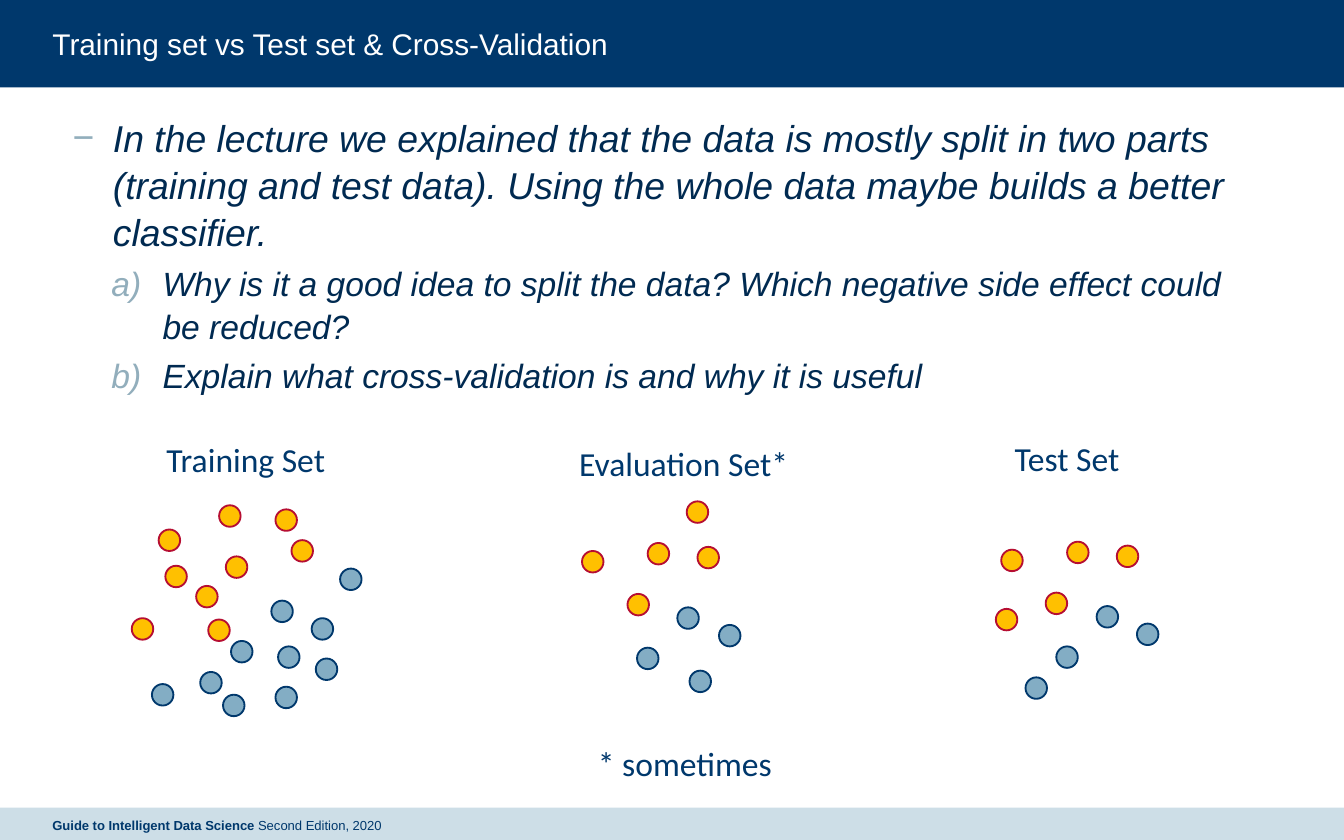
import pptx
import pptx.util
import pptx.dml.color
import pptx.enum.shapes
import pptx.enum.text
import pptx.oxml.ns
from lxml import etree

Pt = pptx.util.Pt
RGBColor = pptx.dml.color.RGBColor
SHAPE = pptx.enum.shapes.MSO_SHAPE
ANCHOR = pptx.enum.text.MSO_ANCHOR
AUTO_SIZE = pptx.enum.text.MSO_AUTO_SIZE
ALIGN = pptx.enum.text.PP_ALIGN
qn = pptx.oxml.ns.qn

NAVY = RGBColor(0x00, 0x38, 0x6C)
INK = RGBColor(0x00, 0x2A, 0x51)
PALE = RGBColor(0xCD, 0xDE, 0xE7)
BULLET = RGBColor(0x92, 0xAE, 0xBC)
YELLOW = RGBColor(0xFF, 0xC0, 0x00)
RED = RGBColor(0xB6, 0x0E, 0x32)
BLUE = RGBColor(0x83, 0xAD, 0xC4)
WHITE = RGBColor(0xFF, 0xFF, 0xFF)

WIDTH, HEIGHT = 720, 450
MARGIN = 28.1
FOOTER_TOP = 432.7
DOT = 11.5

SETS = [
    ("Test Set", (536.4, 231.1, 71.3),
     [(533.5, 326.2), (536.4, 294.5), (560.2, 317.5), (571.7, 290.2), (598.3, 292.3)],
     [(565.9, 346.3), (587.5, 324.7), (609.1, 334.1), (549.4, 362.9)]),
    ("Training Set", (82.1, 231.8, 100.8),
     [(147.6, 272.9), (105.1, 313.9), (88.6, 303.1), (85, 283.7), (121, 298.1),
      (111.6, 331.9), (117.4, 270.7), (156.2, 289.4), (70.6, 331.2)],
     [(149, 346.3), (182.2, 304.6), (169.2, 352.8), (123.8, 343.4), (145.4, 321.8),
      (167, 331.2), (107.3, 360), (81.4, 366.5), (147.6, 367.9), (119.5, 372.2)]),
    ("Evaluation Set*", (303.1, 234, 128.2),
     [(367.9, 268.6), (311.8, 295.2), (336.2, 318.2), (347, 290.9), (373.7, 293)],
     [(341.3, 347), (362.9, 325.4), (385.2, 334.8), (369.4, 359.3)]),
]

QUESTIONS = [
    (0, "In the lecture we explained that the data is mostly split in two parts "
        "(training and test data). Using the whole data maybe builds a better classifier."),
    (1, "Why is it a good idea to split the data? Which negative side effect could be reduced?"),
    (1, "Explain what cross-validation is and why it is useful"),
]


def add_text(p, text, size=18, font="Calibri", color=NAVY, bold=False, italic=False):
    r = p.add_run()
    r.text = text
    r.font.size = Pt(size)
    r.font.name = font
    r.font.color.rgb = color
    r.font.bold = bold
    r.font.italic = italic


class Deck:
    def __init__(self):
        self.prs = pptx.Presentation()
        self.prs.slide_width, self.prs.slide_height = Pt(WIDTH), Pt(HEIGHT)
        self.s = self.prs.slides.add_slide(self.prs.slide_layouts[1])

    def place(self, sp, left, top, width, height):
        sp.left, sp.top, sp.width, sp.height = Pt(left), Pt(top), Pt(width), Pt(height)
        tf = sp.text_frame
        tf.margin_left = tf.margin_top = tf.margin_right = tf.margin_bottom = 0
        tf.word_wrap = True
        tf.auto_size = AUTO_SIZE.NONE
        tf.vertical_anchor = ANCHOR.TOP
        return tf

    def bar(self, top, height, color):
        sp = self.s.shapes.add_shape(SHAPE.RECTANGLE, 0, Pt(top), Pt(WIDTH), Pt(height))
        sp.shadow.inherit = False
        sp.fill.solid()
        sp.fill.fore_color.rgb = color
        sp.line.fill.background()
        self.s.shapes._spTree.insert(2, sp._element)

    def title(self, text):
        tf = self.place(self.s.shapes.title, MARGIN, 13.7, 663.8, 19.4)
        p = tf.paragraphs[0]
        p.alignment = ALIGN.LEFT
        add_text(p, text, size=16, font="Arial", color=WHITE)

    def bullet(self, p, level):
        pPr = p._p.get_or_add_pPr()
        left, hanging = ((21.6, 21.6), (48.2, 27.4))[level]
        pPr.set("marL", str(Pt(left)))
        pPr.set("indent", str(-Pt(hanging)))
        clr = etree.SubElement(pPr, qn("a:buClr"))
        etree.SubElement(clr, qn("a:srgbClr"), val=str(BULLET))
        etree.SubElement(pPr, qn("a:buFont"), typeface="Arial")
        if level:
            etree.SubElement(pPr, qn("a:buAutoNum"), type="alphaLcParenR")
        else:
            etree.SubElement(pPr, qn("a:buChar"), char="−")

    def body(self, items):
        tf = self.place(self.s.placeholders[1], 38.9, 60.5, 638.6, 164.9)
        for i, (level, text) in enumerate(items):
            p = tf.add_paragraph() if i else tf.paragraphs[0]
            p.level = level
            p.line_spacing = 1.05
            p.space_before = Pt((7.5, 3.8)[level])
            self.bullet(p, level)
            add_text(p, text, size=(20, 18)[level], font="Arial", color=INK, italic=True)

    def label(self, shapes, text, left, top, width):
        sp = shapes.add_textbox(Pt(left), Pt(top), Pt(width), Pt(28.8))
        sp.text_frame.word_wrap = False
        add_text(sp.text_frame.paragraphs[0], text)

    def dot(self, shapes, left, top, fill, line):
        sp = shapes.add_shape(SHAPE.OVAL, Pt(left), Pt(top), Pt(DOT), Pt(DOT))
        sp.shadow.inherit = False
        sp.fill.solid()
        sp.fill.fore_color.rgb = fill
        sp.line.color.rgb = line
        sp.line.width = Pt(1)

    def data_set(self, name, label_at, yellow, blue):
        shapes = self.s.shapes.add_group_shape().shapes
        self.label(shapes, name, *label_at)
        for dots, fill, line in ((yellow, YELLOW, RED), (blue, BLUE, NAVY)):
            for left, top in dots:
                self.dot(shapes, left, top, fill, line)

    def footer(self, book, edition):
        sp = self.s.shapes.add_textbox(0, 0, 0, 0)
        tf = self.place(sp, MARGIN, FOOTER_TOP, 316, 18.7)
        tf.vertical_anchor = ANCHOR.MIDDLE
        p = tf.paragraphs[0]
        add_text(p, book, size=7, font="Arial", bold=True)
        add_text(p, edition, size=7, font="Arial")


def main():
    deck = Deck()
    deck.bar(0, 46.8, NAVY)
    deck.bar(FOOTER_TOP, HEIGHT - FOOTER_TOP, PALE)
    deck.title("Training set vs Test set & Cross-Validation")
    deck.body(QUESTIONS)
    for data_set in SETS:
        deck.data_set(*data_set)
    deck.label(deck.s.shapes, "* sometimes", 313.2, 394.6, 108.7)
    deck.footer("Guide to Intelligent Data Science ", "Second Edition, 2020")
    deck.prs.save("out.pptx")


if __name__ == "__main__":
    main()
